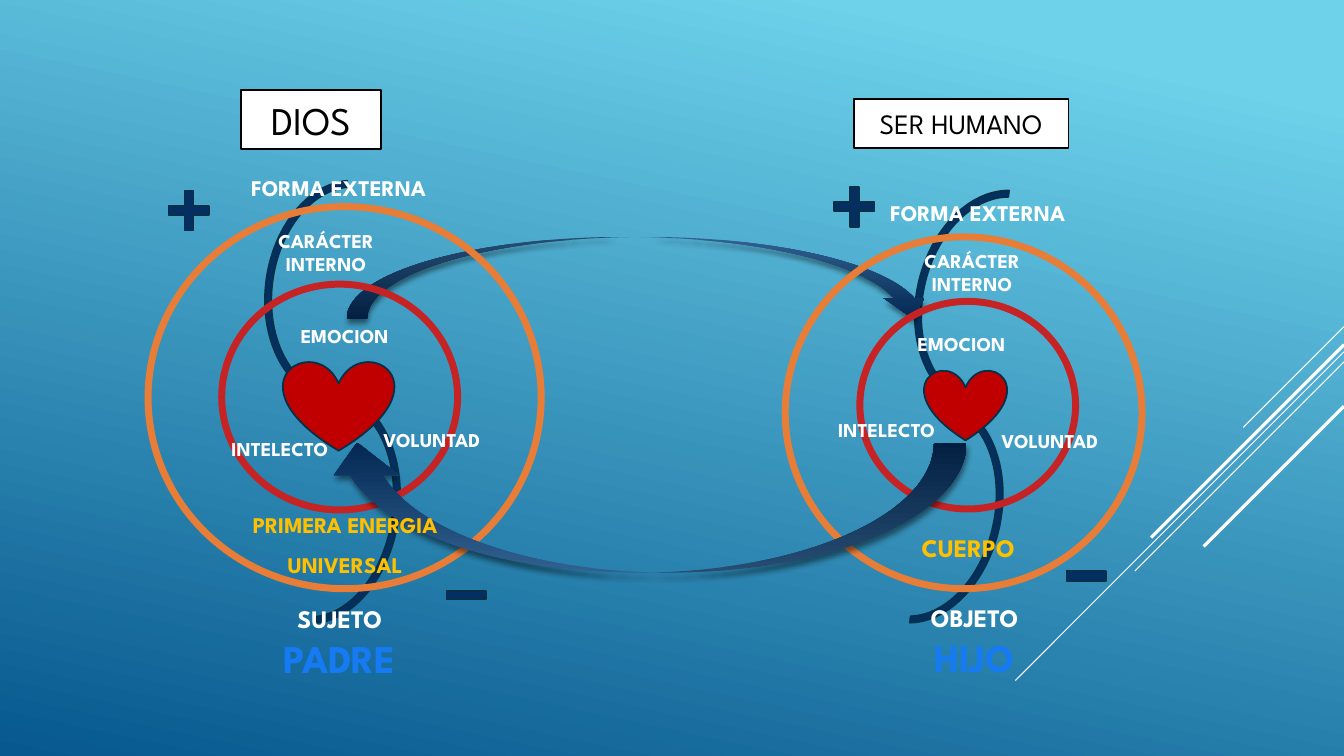
from lxml.etree import SubElement
from pptx import Presentation
from pptx.dml.color import RGBColor
from pptx.enum.shapes import MSO_CONNECTOR, MSO_SHAPE
from pptx.enum.text import MSO_ANCHOR, MSO_AUTO_SIZE, PP_ALIGN
from pptx.oxml.ns import qn
from pptx.util import Pt

COLORS = {
    "sky": "6ED2EB", "deep": "06588E", "navy": "052F61", "edge": "043148",
    "arrow_light": "316190", "arrow_dark": "042853", "orange": "E87D37",
    "red": "C62324", "heart": "C00000", "gold": "FFC000", "blue": "167BF3",
    "white": "FFFFFF", "black": "000000",
}
RAYS = [(233.3, 72, 0.75), (251.3, 234.7, 0.75), (258.5, 149.4, 0.75),
        (246.2, 137.7, 2.25), (290.2, 100.2, 2.25)]
LABEL_SIZES = {
    "FORMA EXTERNA": (144, 26.6, 16, False),
    "CARÁCTER INTERNO": (97.2, 41, 14, True),
    "EMOCION": (89.3, 24.5, 14, True),
    "INTELECTO": (85.7, 24.5, 14, False),
    "VOLUNTAD": (88.6, 24.5, 14, False),
}
GOD = {
    "heading": ("DIOS", 28, (172.1, 64.1, 100.1, 42.5)),
    "arcs": [((167.8, 150.5, 157.7, 113.8), 277.8), ((145.4, 306, 165.6, 113.8), 98.5)],
    "outer": (105.8, 147.6, 280.8, 272.9),
    "inner": (158.4, 203, 168.5, 161.3),
    "heart": (202.3, 257.8, 79.2, 64.1),
    "plus": (115.2, 131, 39.6, 38.9),
    "minus": (313.9, 413.3, 38.2, 23.8),
    "labels": [(169.9, 121), (184.3, 159.8), (201.6, 227.5), (157, 308.2), (264.2, 302.4)],
    "energy": (["PRIMERA ENERGIA", "UNIVERSAL"], 16, (167, 361.4, 159.1, 56.2)),
    "role": ("SUJETO", "PADRE", (123.1, 427.7, 239, 63.4)),
}
HUMAN = {
    "heading": ("SER HUMANO", 20, (609.8, 70.6, 153.4, 35.3)),
    "arcs": [((632.9, 157, 157.7, 113.8), 283.5), ((577.4, 308.2, 161.3, 113.8), 102.7)],
    "outer": (560.9, 169.2, 254.9, 251.3),
    "inner": (614.2, 215.3, 154.1, 148.3),
    "heart": (660.2, 264.2, 59, 50.4),
    "plus": (590.4, 128.2, 39.6, 38.9),
    "minus": (756.7, 397.4, 38.2, 28.1),
    "labels": [(626.4, 139), (645.8, 174.2), (642.2, 233.3), (590.4, 295.2), (705.6, 303.1)],
    "energy": (["CUERPO"], 18, (648.7, 376.6, 85.7, 28.8)),
    "role": ("OBJETO", "HIJO", (576.7, 427, 239, 63.4)),
}


def color(name):
    return RGBColor.from_string(COLORS[name])


class Diagram:
    """Draws styled elements on one slide, measured in points."""

    font = "League Spartan"

    def __init__(self, slide):
        self.slide = slide

    def gradient(self, fill, stops, angle):
        fill.gradient()
        fill.gradient_angle = angle
        for stop, (position, name) in zip(fill.gradient_stops, stops):
            stop.position = position
            stop.color.rgb = color(name)

    def ray(self, top, reach, width):
        ends = (960, top, 960 - reach, top + reach)
        ray = self.slide.shapes.add_connector(MSO_CONNECTOR.STRAIGHT, *map(Pt, ends))
        ray.line.color.rgb = color("white")
        ray.line.width = Pt(width)
        SubElement(ray._element.spPr, qn("a:effectLst"))

    def shape(self, kind, box, fill=None, line=None, width=1.25, rotation=0, adjust=()):
        shape = self.slide.shapes.add_shape(kind, *map(Pt, box))
        shape.shadow.inherit = False
        shape.rotation = rotation
        for index, value in enumerate(adjust):
            shape.adjustments[index] = value
        if fill:
            shape.fill.solid()
            shape.fill.fore_color.rgb = color(fill)
        else:
            shape.fill.background()
        if line:
            shape.line.color.rgb = color(line)
            shape.line.width = Pt(width)
        else:
            shape.line.fill.background()
        return shape

    def exchange_arrow(self, box, rotation=0):
        arrow = self.shape(MSO_SHAPE.CURVED_DOWN_ARROW, box, rotation=rotation)
        self.gradient(arrow.fill, [(0, "arrow_light"), (1, "arrow_dark")], 270)
        effects = arrow._element.spPr.find(qn("a:effectLst"))
        shadow = SubElement(effects, qn("a:outerShdw"), blurRad=str(Pt(4)),
                            dist=str(Pt(3)), dir="5400000", rotWithShape="0")
        tint = SubElement(shadow, qn("a:srgbClr"), val=COLORS["black"])
        SubElement(tint, qn("a:alpha"), val="46000")

    def add_lines(self, frame, lines, bold=True, spaced=True):
        for index, (words, size, name) in enumerate(lines):
            paragraph = frame.paragraphs[0] if index == 0 else frame.add_paragraph()
            layout = {"alignment": PP_ALIGN.CENTER}
            if spaced:
                layout.update(space_before=Pt(size * 0.2), space_after=Pt(6))
            run = paragraph.add_run()
            run.text = words
            run.font.color.rgb = color(name)
            letters = {"name": self.font, "size": Pt(size), "bold": bold}
            for target, values in ((paragraph, layout), (run.font, letters)):
                for key, value in values.items():
                    setattr(target, key, value)

    def label(self, lines, box, wrap=False, spaced=True):
        frame = self.slide.shapes.add_textbox(*map(Pt, box)).text_frame
        frame.word_wrap = wrap
        frame.auto_size = MSO_AUTO_SIZE.SHAPE_TO_FIT_TEXT
        self.add_lines(frame, lines, spaced=spaced)

    def heading(self, words, size, box):
        frame = self.shape(MSO_SHAPE.RECTANGLE, box, "white", "black").text_frame
        frame.vertical_anchor = MSO_ANCHOR.MIDDLE
        self.add_lines(frame, [(words, size, "black")], bold=False)

    def symbols(self, being):
        self.shape(MSO_SHAPE.HEART, being["heart"], "heart", "edge")
        self.shape(MSO_SHAPE.MATH_PLUS, being["plus"], "navy", "edge", adjust=[0.162])
        self.shape(MSO_SHAPE.MATH_MINUS, being["minus"], "navy", "edge")

    def labels(self, being):
        for corner, (words, traits) in zip(being["labels"], LABEL_SIZES.items()):
            width, height, size, wrap = traits
            self.label([(words, size, "white")], (*corner, width, height), wrap)
        energies, size, box = being["energy"]
        self.label([(words, size, "gold") for words in energies], box)
        role, kin, box = being["role"]
        self.label([(role, 18, "white"), (kin, 28, "blue")], box, True, False)


def main():
    deck = Presentation()
    deck.slide_width, deck.slide_height = Pt(960), Pt(540)
    diagram = Diagram(deck.slides.add_slide(deck.slide_layouts[6]))
    diagram.gradient(diagram.slide.background.fill, [(0.1, "sky"), (1, "deep")], 258)
    for ray in RAYS:
        diagram.ray(*ray)
    beings = (GOD, HUMAN)
    for being in beings:
        for box, rotation in being["arcs"]:
            diagram.shape(MSO_SHAPE.BLOCK_ARC, box, "navy", "edge",
                          rotation=rotation, adjust=[108, 211.86, 0.04])
    diagram.exchange_arrow((247.7, 169.2, 419, 58.3))
    for being in beings:
        diagram.heading(*being["heading"])
        diagram.shape(MSO_SHAPE.OVAL, being["outer"], line="orange", width=5)
        diagram.shape(MSO_SHAPE.OVAL, being["inner"], line="red", width=5)
    diagram.exchange_arrow((231.8, 316.1, 458.6, 92.9), 180)
    for being in beings:
        diagram.symbols(being)
        diagram.labels(being)
    deck.save("out.pptx")


if __name__ == "__main__":
    main()
